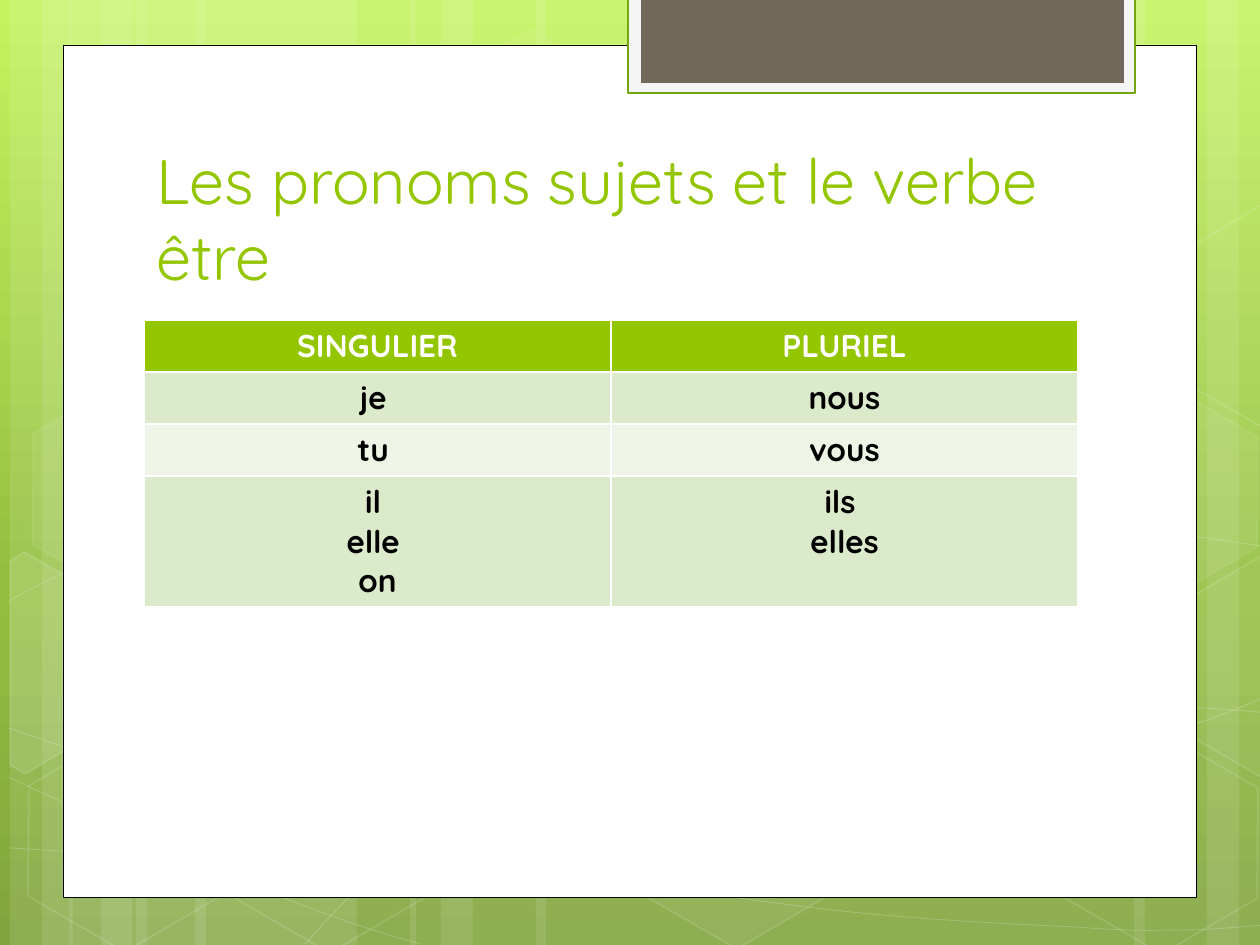
from copy import deepcopy
from math import cos, radians, sin
from pptx import Presentation
from pptx.dml.color import RGBColor as RGB
from pptx.enum.shapes import MSO_SHAPE as Form
from pptx.enum.text import MSO_ANCHOR as Anchor, PP_ALIGN as Align
from pptx.oxml.ns import qn
from pptx.oxml.xmlchemy import OxmlElement as Node
from pptx.util import Pt

PX = 914400 / 126
THEME = {
    "white": "FFFFFF", "black": "000000", "lime": "94C600", "rim": "74A510",
    "mist": "F5F5F5", "stone": "71685A", "odd": "DCEACC", "even": "EEF5E7",
    "sky": [(0, "C3F35F"), (0.62, "93BF3F"), (1, "81A53E")],
    "title": Pt(36), "cell": Pt(18), "face": "Quicksand",
}


def paint(shape, fill=None, alpha=100, line=None, width=1, clear=100):
    """Set fill and outline; alpha and clear are opacities in percent."""
    shape.shadow.inherit = False
    props = shape._element.spPr
    if line:
        shape.line.width = Pt(width)
    for part, color, share, tag in ((shape.fill, fill, alpha, "a:solidFill"),
                                    (shape.line.fill, line, clear, "a:ln/a:solidFill")):
        if color is None:
            part.background()
            continue
        part.solid()
        part.fore_color.rgb = RGB.from_string(THEME[color])
        if share < 100:
            tone = props.find("/".join(qn(name) for name in tag.split("/")))[0]
            tone.append(Node("a:alpha"))
            tone[-1].set("val", str(share * 1000))


def write(para, text, color, **font):
    run = para.add_run()
    run.text = text
    run.font.color.rgb = RGB.from_string(THEME[color])
    for key, val in font.items():
        setattr(run.font, key, val)


deck = Presentation()
deck.slide_width, deck.slide_height = round(1260 * PX), round(945 * PX)
slide = deck.slides.add_slide(deck.slide_layouts[6])
shapes = slide.shapes

# Background gradient
back = slide.background.fill
back.gradient()
back.gradient_angle = 270
stops = slide.element.find(".//" + qn("a:gsLst"))
stops.append(deepcopy(stops[-1]))
for stop, (pos, color) in zip(back.gradient_stops, THEME["sky"]):
    stop.position = pos
    stop.color.rgb = RGB.from_string(color)

# Pale vertical bars
bars = [(136, 221), (10, 63), (42, 105), (195, 221), (69, 63), (101, 105),
        (924, 221), (1207, 63), (1134, 105), (536, 388), (410, 63), (441, 105)]
for left, wide in bars:
    bar = shapes.add_shape(Form.RECTANGLE, *[round(n * PX) for n in (left, 0, wide, 945)])
    paint(bar, "white", 10)

# Thin waves: a start, then cubic segments of two handles and an end
waves = [
    [(9, 848), (77, 852), (145, 856), (239, 854), (334, 853), (451, 851), (577, 838),
     (703, 825), (882, 802), (998, 777), (1113, 753), (1231, 716), (1269, 694)],
    [(9, 601), (45, 581), (82, 562), (152, 543), (224, 521), (326, 496), (437, 488),
     (549, 479), (685, 478), (824, 488), (963, 498), (1193, 537), (1269, 547)],
    [(8, 777), (160, 847), (311, 916), (421, 944)],
    [(9, 728), (48, 742), (88, 756), (161, 776), (234, 795), (344, 827), (450, 848),
     (554, 869), (687, 892), (791, 905), (896, 919), (1008, 924), (1075, 927),
     (1140, 932), (1158, 930), (1191, 930), (1223, 929), (1246, 926), (1269, 925)],
    [(305, 944), (328, 919), (350, 893), (381, 871), (412, 848), (454, 823), (489, 805),
     (524, 787), (546, 780), (592, 767), (638, 754), (722, 737), (766, 728),
     (811, 719), (818, 719), (857, 717), (896, 713), (958, 709), (1000, 708),
     (1045, 707), (1116, 708), (1116, 708), (1144, 708), (1173, 708), (1201, 708),
     (1223, 709), (1245, 711), (1256, 712), (1268, 713), (1264, 712), (1268, 713)],
]
for dots in waves:
    pen = shapes.build_freeform(*dots[0], scale=PX)
    pen.add_line_segments(dots[1:], close=False)
    wave = pen.convert_to_shape()
    track = wave._element.find(".//" + qn("a:path"))
    legs = track.findall(qn("a:lnTo"))
    for i in range(0, len(legs), 3):
        curve = Node("a:cubicBezTo")
        for leg in legs[i:i + 3]:
            curve.append(leg[0])
            track.remove(leg)
        track.append(curve)
    paint(wave, line="white", width=0.5, clear=20)

# Whole hexagons: left, top, fill opacity, line opacity
hexes = [(421, 45, 4, 8), (626, 742, 6, 12), (14, 745, 0, 12), (18, 393, 7, 8),
         (219, 746, 0, 12), (949, 571, 10, 12), (1051, 747, 0, 12), (1051, 396, 7, 8)]
TILT = 30
for left, top, alpha, clear in hexes:
    tile = shapes.add_shape(Form.HEXAGON, *[round(n * PX) for n in (left, top, 221, 192)])
    tile.adjustments[0], tile.adjustments[1] = 0.285, 1.155
    tile.rotation = TILT
    paint(tile, "white" if alpha else None, alpha, "white", 1, clear)

# Hexagons cut by the slide edge: fill opacity, centre, corners as seen
cuts = [
    (10, (45, 674), [(10, 561), (24, 552), (121, 607), (120, 718), (25, 774), (10, 765)]),
    (4, (1241, 655), [(1167, 611), (1261, 556), (1271, 562), (1271, 772), (1262, 777),
                      (1167, 722)]),
    (0, (1241, 304), [(1167, 261), (1261, 205), (1272, 212), (1271, 422), (1262, 427),
                      (1167, 372)]),
]
c, s = cos(radians(TILT)), sin(radians(TILT))
for alpha, (mx, my), dots in cuts:
    flat = [(round((mx + (x - mx) * c + (y - my) * s) * PX),
             round((my - (x - mx) * s + (y - my) * c) * PX)) for x, y in dots]
    pen = shapes.build_freeform(*flat[0])
    pen.add_line_segments(flat[1:], close=True)
    tile = pen.convert_to_shape()
    tile.rotation = TILT
    paint(tile, "white" if alpha else None, alpha, "white", 1, 12)

# White page and top tab
panels = [
    ((63, 45, 1134, 853), {"fill": "white", "line": "black", "width": 0.5}),
    ((628, -2, 507, 95), {"fill": "mist", "line": "rim", "width": 1.25}),
    ((641, -2, 483, 85), {"fill": "stone"}),
]
for box, look in panels:
    paint(shapes.add_shape(Form.RECTANGLE, *[round(n * PX) for n in box]), **look)

# Title
frame = shapes.add_textbox(*[round(n * PX) for n in (144, 141, 968, 158)]).text_frame
for key, val in {"word_wrap": True, "vertical_anchor": Anchor.BOTTOM}.items():
    setattr(frame, key, val)
write(frame.paragraphs[0], "Les pronoms sujets et le verbe être", "lime",
      size=THEME["title"], name=THEME["face"])

# Pronoun table
rows = [("SINGULIER", "PLURIEL"), ("je ", "nous"), ("tu ", "vous"),
        ("il \nelle \non", "ils \nelles")]
highs = [52, 52, 52, 131]
box = [round(n * PX) for n in (144, 320, 934, sum(highs))]
table = shapes.add_table(len(rows), 2, *box).table
for col in table.columns:
    col.width = round(467 * PX)
for r, (row, high) in enumerate(zip(rows, highs)):
    table.rows[r].height = round(high * PX)
    shade = "lime" if r == 0 else "odd" if r % 2 else "even"
    for cell, text in zip(table.rows[r].cells, row):
        cell.fill.solid()
        cell.fill.fore_color.rgb = RGB.from_string(THEME[shade])
        for n, word in enumerate(text.split("\n")):
            para = cell.text_frame.add_paragraph() if n else cell.text_frame.paragraphs[0]
            para.alignment = Align.CENTER
            write(para, word, "black" if r else "white",
                  size=THEME["cell"], name=THEME["face"], bold=True)

deck.save("out.pptx")
